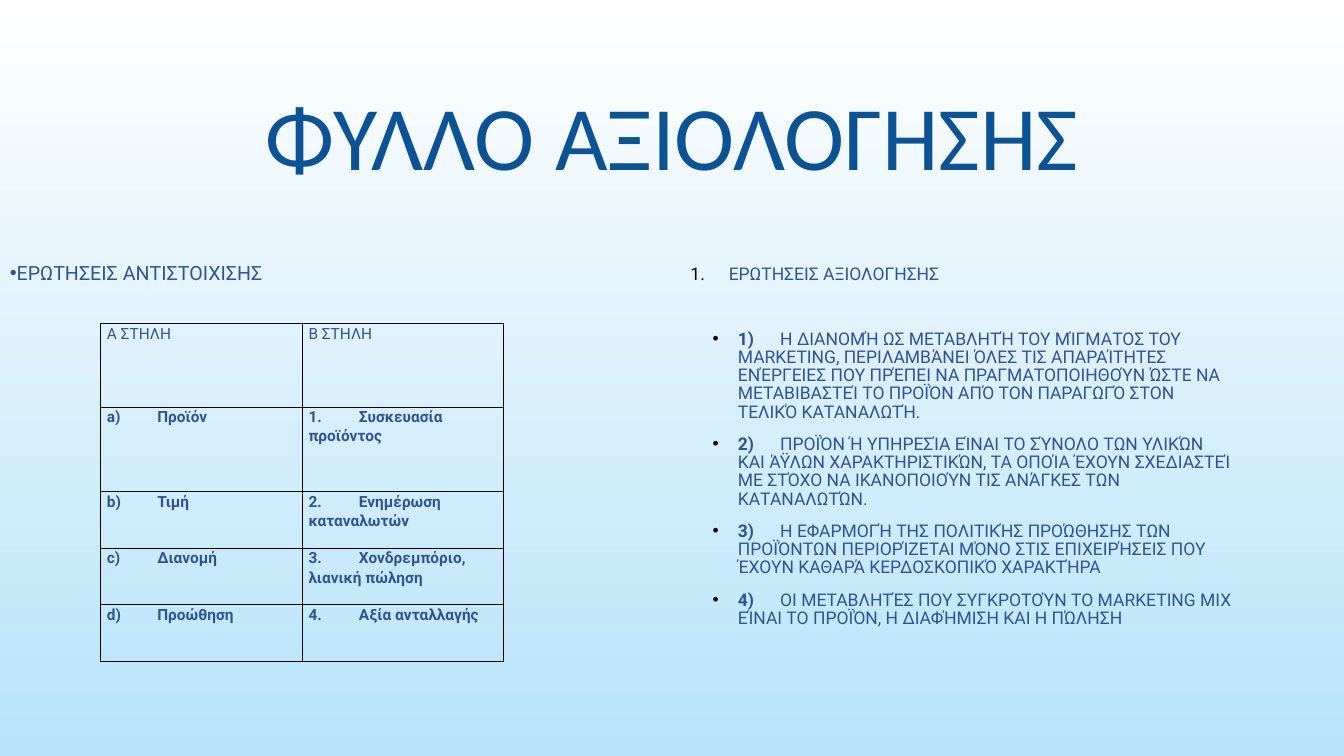
from lxml import etree
from pptx import Presentation
from pptx.dml.color import RGBColor
from pptx.enum.text import MSO_ANCHOR as ANCHOR, PP_ALIGN as ALIGN
from pptx.oxml.ns import qn
from pptx.util import Inches, Pt

COLORS = {
    "title": "0B5394",
    "text": "2F5496",
    "line": "000000",
    "bg_top": "FFFFFF",
    "bg_bottom": "B8E3F9",
}

MATCHING = [
    ("Α ΣΤΗΛΗ", "Β ΣΤΗΛΗ"),
    ("a)\tΠροϊόν", "1.\tΣυσκευασία προϊόντος"),
    ("b)\tΤιμή", "2.\tΕνημέρωση καταναλωτών"),
    ("c)\tΔιανομή", "3.\tΧονδρεμπόριο, λιανική πώληση"),
    ("d)\tΠροώθηση", "4.\tΑξία ανταλλαγής"),
]
COL_WIDTHS = [2, 1.99]
ROW_HEIGHTS = [0.83, 0.84, 0.56, 0.56, 0.56]

STATEMENTS = [
    "Η ΔΙΑΝΟΜΉ ΩΣ ΜΕΤΑΒΛΗΤΉ ΤΟΥ ΜΊΓΜΑΤΟΣ ΤΟΥ MARKETING, ΠΕΡΙΛΑΜΒΆΝΕΙ ΌΛΕΣ "
    "ΤΙΣ ΑΠΑΡΑΊΤΗΤΕΣ ΕΝΈΡΓΕΙΕΣ ΠΟΥ ΠΡΈΠΕΙ ΝΑ ΠΡΑΓΜΑΤΟΠΟΙΗΘΟΎΝ ΏΣΤΕ ΝΑ "
    "ΜΕΤΑΒΙΒΑΣΤΕΊ ΤΟ ΠΡΟΪΌΝ ΑΠΌ ΤΟΝ ΠΑΡΑΓΩΓΌ ΣΤΟΝ ΤΕΛΙΚΌ ΚΑΤΑΝΑΛΩΤΉ.",
    "ΠΡΟΪΌΝ Ή ΥΠΗΡΕΣΊΑ ΕΊΝΑΙ ΤΟ ΣΎΝΟΛΟ ΤΩΝ ΥΛΙΚΏΝ ΚΑΙ ΆΫΛΩΝ "
    "ΧΑΡΑΚΤΗΡΙΣΤΙΚΏΝ, ΤΑ ΟΠΟΊΑ ΈΧΟΥΝ ΣΧΕΔΙΑΣΤΕΊ ΜΕ ΣΤΌΧΟ ΝΑ ΙΚΑΝΟΠΟΙΟΎΝ "
    "ΤΙΣ ΑΝΆΓΚΕΣ ΤΩΝ ΚΑΤΑΝΑΛΩΤΏΝ.",
    "Η ΕΦΑΡΜΟΓΉ ΤΗΣ ΠΟΛΙΤΙΚΉΣ ΠΡΟΏΘΗΣΗΣ ΤΩΝ ΠΡΟΪΌΝΤΩΝ ΠΕΡΙΟΡΊΖΕΤΑΙ ΜΌΝΟ "
    "ΣΤΙΣ ΕΠΙΧΕΙΡΉΣΕΙΣ ΠΟΥ ΈΧΟΥΝ ΚΑΘΑΡΆ ΚΕΡΔΟΣΚΟΠΙΚΌ ΧΑΡΑΚΤΉΡΑ",
    "ΟΙ ΜΕΤΑΒΛΗΤΈΣ ΠΟΥ ΣΥΓΚΡΟΤΟΎΝ ΤΟ MARKETING MIX ΕΊΝΑΙ ΤΟ ΠΡΟΪΌΝ, Η "
    "ΔΙΑΦΉΜΙΣΗ ΚΑΙ Η ΠΏΛΗΣΗ",
]


def add_solid(parent, color):
    fill = etree.SubElement(parent, qn("a:solidFill"))
    etree.SubElement(fill, qn("a:srgbClr"), val=COLORS[color])


def add_bullet(p, bullet, color=None):
    pPr = p._p.get_or_add_pPr()
    if color:
        clr = etree.SubElement(pPr, qn("a:buClr"))
        etree.SubElement(clr, qn("a:srgbClr"), val=COLORS[color])
    if bullet == "1.":
        etree.SubElement(pPr, qn("a:buFont"), typeface="+mj-lt")
        etree.SubElement(pPr, qn("a:buAutoNum"), type="arabicPeriod")
    else:
        etree.SubElement(pPr, qn("a:buFont"), typeface="Arial")
        etree.SubElement(pPr, qn("a:buChar"), char=bullet)


def add_text(tf, text, size, color="text", font="Roboto", lead="", bold=False,
             align=ALIGN.LEFT, spacing=None, before=0, after=0,
             margin=0, indent=0, bullet=None, bullet_color=None, tabs=()):
    """Write one paragraph; lead is a bold opening run."""
    p = tf.paragraphs[0]
    if p.runs:
        p = tf.add_paragraph()
    p.alignment = align
    p.line_spacing = spacing
    p.space_before, p.space_after = Pt(before), Pt(after)
    pPr = p._p.get_or_add_pPr()
    pPr.set("marL", str(Inches(margin)))
    pPr.set("indent", str(Inches(indent)))
    if bullet:
        add_bullet(p, bullet, bullet_color)
    if tabs:
        tab_list = etree.SubElement(pPr, qn("a:tabLst"))
        for pos in tabs:
            etree.SubElement(tab_list, qn("a:tab"), pos=str(Inches(pos)), algn="l")
    for part, is_bold in ((lead, True), (text, bold)):
        if part:
            r = p.add_run()
            r.text = part
            r.font.name, r.font.size, r.font.bold = font, Pt(size), is_bold
            r.font.color.rgb = RGBColor.from_string(COLORS[color])


def add_box(slide, left, top, width, height, anchor=ANCHOR.TOP):
    sp = slide.shapes.add_textbox(Inches(left), Inches(top), Inches(width), Inches(height))
    tf = sp.text_frame
    tf.word_wrap = True
    tf.vertical_anchor = anchor
    return tf


def add_borders(cell):
    tcPr = cell._tc.get_or_add_tcPr()
    for i, side in enumerate(("lnL", "lnR", "lnT", "lnB")):
        ln = etree.Element(qn(f"a:{side}"), w=str(Pt(1)))
        add_solid(ln, "line")
        tcPr.insert(i, ln)


def add_matching_table(slide, left, top):
    frame = slide.shapes.add_table(
        len(MATCHING), len(COL_WIDTHS), Inches(left), Inches(top),
        Inches(sum(COL_WIDTHS)), Inches(sum(ROW_HEIGHTS)))
    table = frame.table
    table.first_row = table.horz_banding = False
    for col, width in zip(table.columns, COL_WIDTHS):
        col.width = Inches(width)
    for i, (row, height) in enumerate(zip(table.rows, ROW_HEIGHTS)):
        row.height = Inches(height)
        for cell, text in zip(row.cells, MATCHING[i]):
            cell.margin_left = cell.margin_right = Inches(0.06)
            cell.margin_top = cell.margin_bottom = 0
            cell.fill.background()
            add_borders(cell)
            add_text(cell.text_frame, text, 11, bold=i > 0, spacing=1.07,
                     after=8, tabs=[0.36] if i else ())


def set_background(slide):
    fill = slide.background.fill
    fill.gradient()
    fill.gradient_angle = 270
    for stop, name, pos in zip(fill.gradient_stops, ("bg_top", "bg_bottom"), (0, 1)):
        stop.color.rgb = RGBColor.from_string(COLORS[name])
        stop.position = pos


def main():
    prs = Presentation()
    prs.slide_width, prs.slide_height = Inches(13.33), Inches(7.5)
    slide = prs.slides.add_slide(prs.slide_layouts[6])
    set_background(slide)

    # Title, raised a little by the bottom inset
    tf = add_box(slide, 1, 0.68, 11.33, 1.75, ANCHOR.MIDDLE)
    tf.margin_bottom = Inches(0.5)
    add_text(tf, "ΦΥΛΛΟ ΑΞΙΟΛΟΓΗΣΗΣ", 64.8, "title", "Calibri", align=ALIGN.CENTER)

    # Matching questions
    add_matching_table(slide, 1, 3.21)
    tf = add_box(slide, 0, 2.59, 13.33, 0.5)
    tf.margin_top = 0
    add_text(tf, "ΕΡΩΤΗΣΕΙΣ ΑΝΤΙΣΤΟΙΧΙΣΗΣ", 14, bullet="•")

    # Evaluation questions
    tf = add_box(slide, 6.75, 2.59, 5.58, 3.74)
    add_text(tf, "ΕΡΩΤΗΣΕΙΣ ΑΞΙΟΛΟΓΗΣΗΣ", 12.5, spacing=0.87, margin=0.38,
             indent=-0.38, bullet="1.", bullet_color="line")
    for n, statement in enumerate(STATEMENTS, 1):
        # Tab stops serve both indent-relative and box-relative measuring
        add_text(tf, "\t" + statement, 12.5, lead=f"{n})", spacing=0.87,
                 before=33 if n == 1 else 10, margin=0.47, indent=-0.25,
                 bullet="•", bullet_color="line", tabs=[0.42, 0.89])

    prs.save("out.pptx")


if __name__ == "__main__":
    main()
